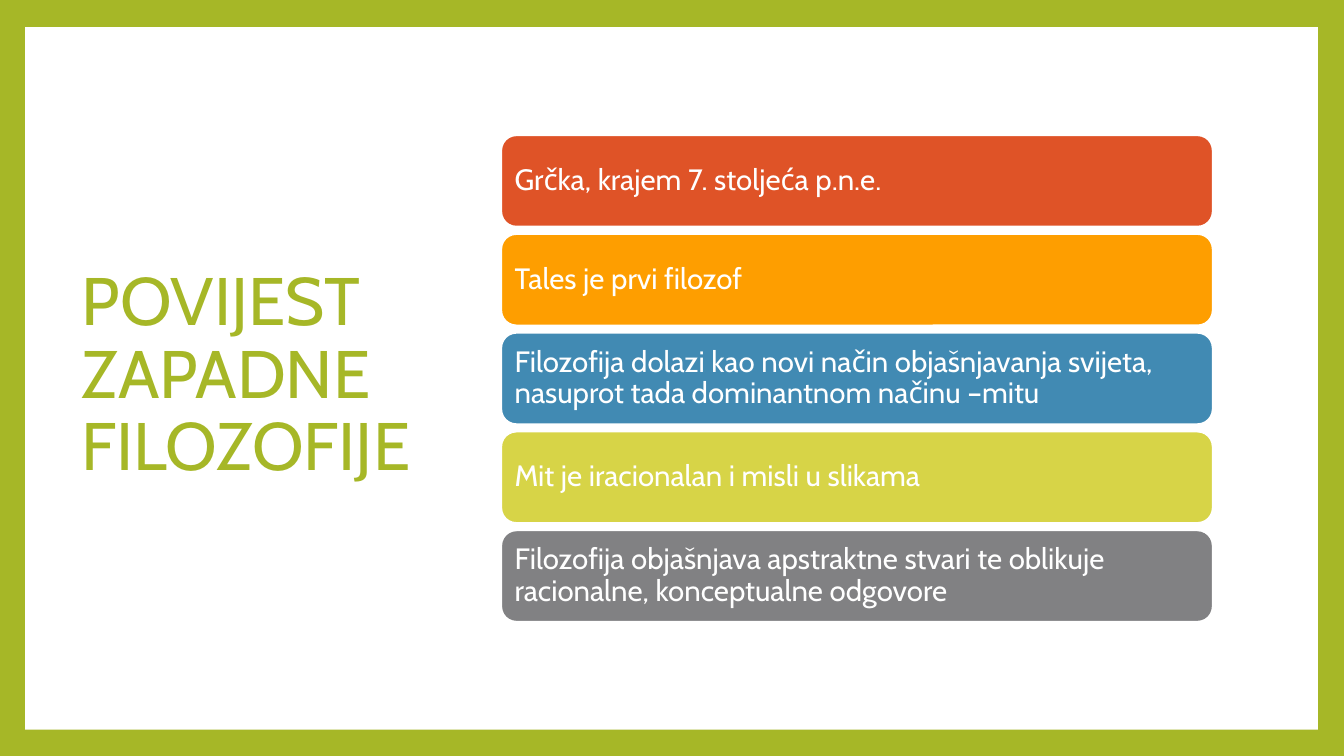
import pptx
import pptx.util
import pptx.dml.color
import pptx.enum.shapes
import pptx.enum.text

COLORS = {
    "green": "A6B727",
    "white": "FFFFFF",
    "red": "DF5327",
    "orange": "FE9E00",
    "blue": "418AB3",
    "yellow": "D7D447",
    "gray": "818183",
}
SHAPES = pptx.enum.shapes.MSO_SHAPE
Inches = pptx.util.Inches


def rgb(name):
    return pptx.dml.color.RGBColor.from_string(COLORS[name])


def write(holder, text, size, color, inset, space_after=0):
    frame = holder.text_frame
    frame.word_wrap = True
    frame.auto_size = pptx.enum.text.MSO_AUTO_SIZE.NONE
    frame.vertical_anchor = pptx.enum.text.MSO_ANCHOR.MIDDLE
    frame.margin_left = frame.margin_right = Inches(inset)
    frame.margin_top = frame.margin_bottom = Inches(inset)
    paragraph = frame.paragraphs[0]
    paragraph.alignment = pptx.enum.text.PP_ALIGN.LEFT
    paragraph.line_spacing = 0.9
    paragraph.space_before = pptx.util.Pt(0)
    paragraph.space_after = pptx.util.Pt(space_after)
    run = paragraph.add_run()
    run.text = text
    run.font.name = "Cabin"
    run.font.size = pptx.util.Pt(size)
    run.font.color.rgb = rgb(color)


deck = pptx.Presentation()
deck.slide_width = Inches(13.33)
deck.slide_height = Inches(7.5)
slide = deck.slides.add_slide(deck.slide_layouts[5])
slide.background.fill.solid()
slide.background.fill.fore_color.rgb = rgb("green")

page = slide.shapes.add_shape(
    SHAPES.RECTANGLE, Inches(0.25), Inches(0.27), Inches(12.82), Inches(6.97))
page.shadow.inherit = False
page.fill.solid()
page.fill.fore_color.rgb = rgb("white")
page.line.fill.background()

heading = slide.shapes.title
heading.left, heading.top = Inches(0.71), Inches(0.67)
heading.width, heading.height = Inches(3.68), Inches(6.13)
write(heading, "POVIJEST ZAPADNE FILOZOFIJE", size=48, color="green", inset=0.1)
page._element.addnext(heading._element)

statements = [
    ("red", "Grčka, krajem 7. stoljeća p.n.e."),
    ("orange", "Tales je prvi filozof"),
    ("blue", "Filozofija dolazi kao novi način objašnjavanja svijeta, "
             "nasuprot tada dominantnom načinu –mitu"),
    ("yellow", "Mit je iracionalan i misli u slikama"),
    ("gray", "Filozofija objašnjava apstraktne stvari te oblikuje "
             "racionalne, konceptualne odgovore"),
]
first_top, row_pitch, bar_height = 1.34, 0.98, 0.91

for row, (color, statement) in enumerate(statements):
    bar = slide.shapes.add_shape(
        SHAPES.ROUNDED_RECTANGLE, Inches(4.97), Inches(first_top + row * row_pitch),
        Inches(7.06), Inches(bar_height))
    bar.shadow.inherit = False
    bar.fill.solid()
    bar.fill.fore_color.rgb = rgb(color)
    bar.line.color.rgb = rgb("white")
    bar.line.width = pptx.util.Pt(1.5)
    write(bar, statement, size=21, color="white", inset=0.09, space_after=7.35)

deck.save("out.pptx")
